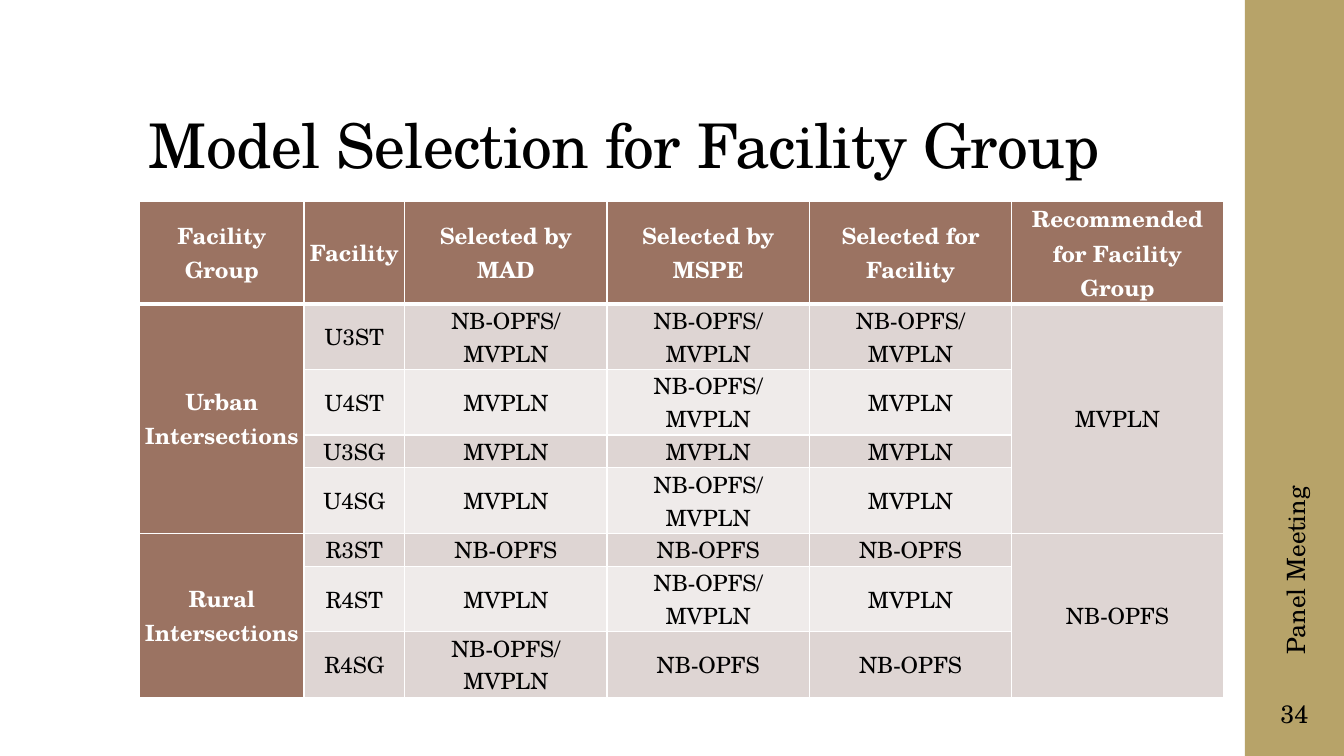
from lxml import etree
from pptx import Presentation
from pptx.dml.color import RGBColor
from pptx.enum import shapes, text
from pptx.oxml import ns
from pptx.util import Cm, Pt

GOLD = RGBColor(0xB7, 0xA3, 0x69)
BROWN = RGBColor(0x9B, 0x73, 0x62)
DARK_BAND = RGBColor(0xDE, 0xD5, 0xD3)
LIGHT_BAND = RGBColor(0xEF, 0xEB, 0xEA)
BLACK = RGBColor(0, 0, 0)
WHITE = RGBColor(255, 255, 255)
FONT = "TeX Gyre Schola"
MIDDLE = text.MSO_ANCHOR.MIDDLE
CENTER = text.PP_ALIGN.CENTER


def add_run(tf, words, size, color=BLACK, bold=False, align=None):
    tf.word_wrap = True
    p = tf.paragraphs[0]
    p.alignment = align
    r = p.add_run()
    r.text = words
    r.font.name, r.font.size, r.font.bold = FONT, Pt(size), bold
    r.font.color.rgb = color
    return p, r


def add_border(cell, side, width):
    ln = etree.SubElement(cell._tc.get_or_add_tcPr(), ns.qn("a:" + side), w=str(Pt(width)))
    fill = etree.SubElement(ln, ns.qn("a:solidFill"))
    etree.SubElement(fill, ns.qn("a:srgbClr"), val=str(WHITE))


prs = Presentation()
prs.slide_width, prs.slide_height = Cm(33.87), Cm(19.05)
s = prs.slides.add_slide(prs.slide_layouts[6])

bar = s.shapes.add_shape(shapes.MSO_SHAPE.RECTANGLE, Cm(31.37), 0, Cm(2.5), Cm(19.05))
bar.shadow.inherit = False
bar.fill.solid()
bar.fill.fore_color.rgb = GOLD
bar.line.fill.background()

title = s.shapes.add_textbox(Cm(3.5), Cm(1.02), Cm(26.92), Cm(3.68))
title.text_frame.vertical_anchor = text.MSO_ANCHOR.BOTTOM
p, r = add_run(title.text_frame, "Model Selection for Facility Group", 44)
p.line_spacing = 0.9
r.font._element.set("spc", "-50")

footer = s.shapes.add_textbox(Cm(27.66), Cm(11.25), Cm(9.96), Cm(1.02))
footer.rotation = 270
footer.text_frame.vertical_anchor = MIDDLE
add_run(footer.text_frame, "Panel Meeting", 18)

number = s.shapes.add_textbox(Cm(31.37), Cm(17.15), Cm(2.5), Cm(1.65))
tf = number.text_frame
tf.vertical_anchor = MIDDLE
tf.margin_left = tf.margin_right = tf.margin_top = tf.margin_bottom = Cm(0.13)
add_run(tf, "34", 18, align=CENTER)

BOTH = "NB-OPFS/MVPLN"
rows = [
    ["Facility Group", "Facility", "Selected by MAD", "Selected by MSPE",
     "Selected for Facility", "Recommended for Facility Group"],
    ["Urban Intersections", "U3ST", BOTH, BOTH, BOTH, "MVPLN"],
    ["", "U4ST", "MVPLN", BOTH, "MVPLN", ""],
    ["", "U3SG", "MVPLN", "MVPLN", "MVPLN", ""],
    ["", "U4SG", "MVPLN", BOTH, "MVPLN", ""],
    ["Rural Intersections", "R3ST", "NB-OPFS", "NB-OPFS", "NB-OPFS", "NB-OPFS"],
    ["", "R4ST", "MVPLN", BOTH, "MVPLN", ""],
    ["", "R4SG", BOTH, "NB-OPFS", "NB-OPFS", ""],
]
widths = [4.14, 2.54, 5.1, 5.1, 5.1, 5.33]
heights = [2.58] + [1.65 if BOTH in row else 0.83 for row in rows[1:]]

table = s.shapes.add_table(len(rows), len(widths), Cm(3.52), Cm(5.08),
                           Cm(sum(widths)), Cm(sum(heights))).table
for column, width in zip(table.columns, widths):
    column.width = Cm(width)
for row, height in zip(table.rows, heights):
    row.height = Cm(height)

for i, row in enumerate(rows):
    for j, words in enumerate(row):
        cell = table.cell(i, j)
        heading = i == 0 or j == 0
        cell.vertical_anchor = MIDDLE
        cell.margin_left = cell.margin_right = Cm(0.1)
        cell.margin_top = cell.margin_bottom = 0
        for side in ("lnL", "lnR", "lnT", "lnB"):
            thick = (i, side) in ((0, "lnB"), (1, "lnT"))
            add_border(cell, side, 3 if thick else 1)
        cell.fill.solid()
        band = DARK_BAND if i % 2 or j == 5 else LIGHT_BAND
        cell.fill.fore_color.rgb = BROWN if heading else band
        if words:
            add_run(cell.text_frame, words, 16, WHITE if heading else BLACK, heading, CENTER)

for first, last in ((1, 4), (5, 7)):
    for j in (0, 5):
        table.cell(first, j).merge(table.cell(last, j))

prs.save("out.pptx")
